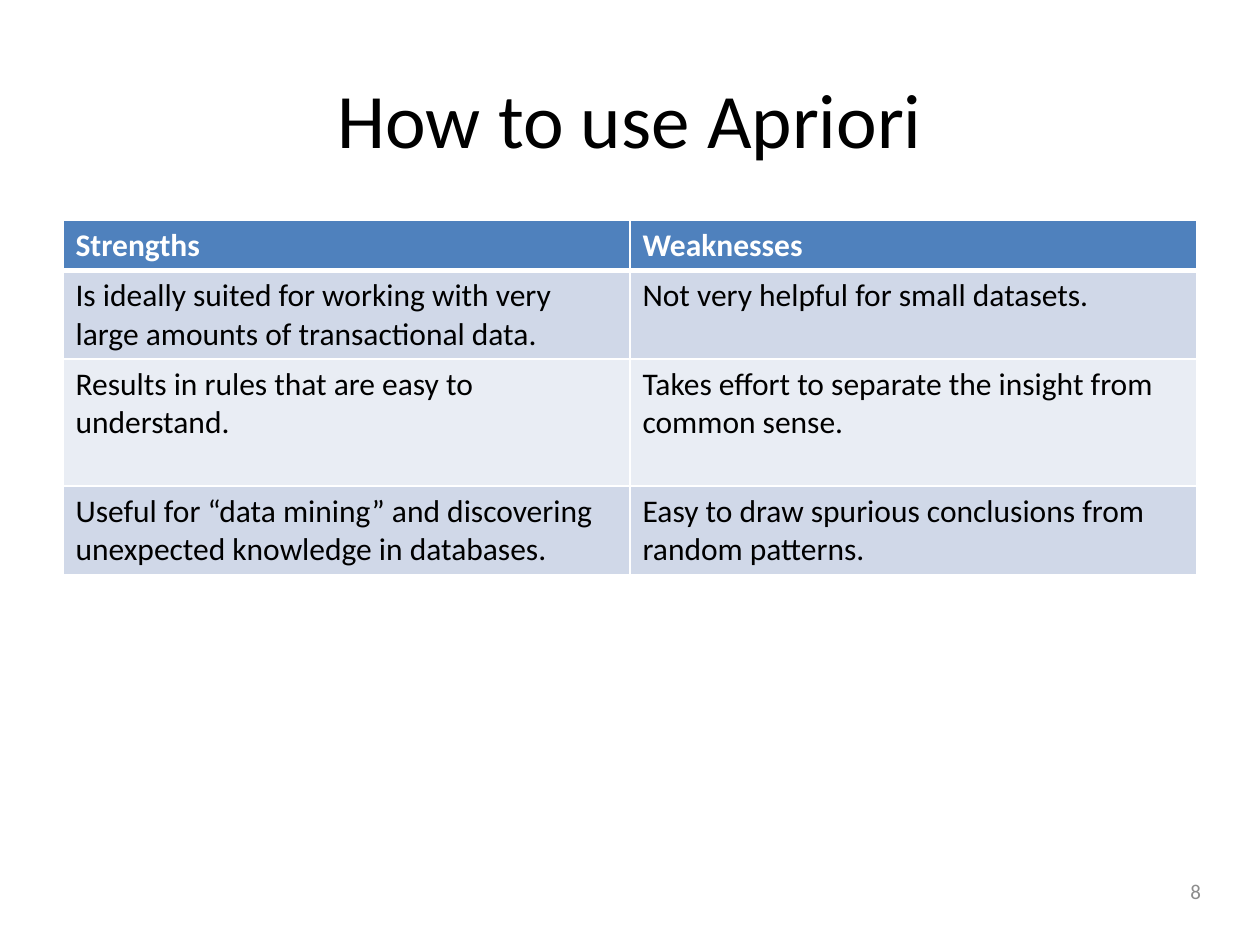
from dataclasses import dataclass

from lxml.etree import SubElement
from pptx import Presentation
from pptx.dml.color import RGBColor as RGB
from pptx.enum.text import MSO_ANCHOR as ANCHOR, PP_ALIGN as ALIGN
from pptx.oxml.ns import qn
from pptx.util import Inches, Pt

COLORS = {
    "black": "000000",
    "white": "FFFFFF",
    "grey": "8C8C8C",
    "header": "4F81BD",
    "band_dark": "D0D8E8",
    "band_light": "E9EDF4",
}
WIDTH, HEIGHT = Inches(10), Inches(7.5)


@dataclass
class Box:
    x: float
    y: float
    w: float
    h: float

    def place(self) -> tuple[int, int, int, int]:
        return (int(self.x * WIDTH), int(self.y * HEIGHT),
                int(self.w * WIDTH), int(self.h * HEIGHT))


@dataclass
class Row:
    strength: str
    weakness: str
    height: float


ROWS = [
    Row("Strengths", "Weaknesses", 0.4),
    Row("Is ideally suited for working with very large amounts of transactional data.",
        "Not very helpful for small datasets.", 0.7),
    Row("Results in rules that are easy to understand.",
        "Takes effort to separate the insight from common sense.", 1.01),
    Row("Useful for “data mining” and discovering unexpected knowledge in databases.",
        "Easy to draw spurious conclusions from random patterns.", 0.7),
]


def write(tf, text: str, *, size: int = 18, color: str = "black",
          bold: bool = False, align=ALIGN.LEFT) -> None:
    p = tf.paragraphs[0]
    p.alignment = align
    r = p.add_run()
    r.text = text
    r.font.name = "Calibri"
    r.font.size = Pt(size)
    r.font.bold = bold
    r.font.color.rgb = RGB.from_string(COLORS[color])


def add_text(s, box: Box, text: str, **style) -> None:
    tf = s.shapes.add_textbox(*box.place()).text_frame
    tf.word_wrap = True
    tf.vertical_anchor = ANCHOR.MIDDLE
    write(tf, text, **style)


def set_borders(cell, widths: dict[str, int]) -> None:
    tc_pr = cell._tc.get_or_add_tcPr()
    for i, (side, width) in enumerate(widths.items()):
        ln = SubElement(tc_pr, qn(f"a:ln{side}"), w=str(Pt(width)))
        fill = SubElement(ln, qn("a:solidFill"))
        SubElement(fill, qn("a:srgbClr"), val=COLORS["white"])
        tc_pr.insert(i, ln)


def add_comparison(s, box: Box, rows: list[Row]) -> None:
    table = s.shapes.add_table(len(rows), 2, *box.place()).table
    for i, row in enumerate(rows):
        table.rows[i].height = Inches(row.height)
        header = i == 0
        fill = "header" if header else ("band_dark" if i % 2 else "band_light")
        borders = {"L": 1, "R": 1, "T": 3 if i == 1 else 1, "B": 3 if header else 1}
        for j, text in enumerate((row.strength, row.weakness)):
            cell = table.cell(i, j)
            cell.fill.solid()
            cell.fill.fore_color.rgb = RGB.from_string(COLORS[fill])
            set_borders(cell, borders)
            write(cell.text_frame, text, bold=header,
                  color="white" if header else "black")


def main() -> None:
    prs = Presentation()
    prs.slide_width, prs.slide_height = WIDTH, HEIGHT
    s = prs.slides.add_slide(prs.slide_layouts[6])
    add_text(s, Box(0.05, 0.04, 0.9, 0.17), "How to use Apriori",
             size=44, align=ALIGN.CENTER)
    table_height = sum(row.height for row in ROWS) / 7.5
    add_comparison(s, Box(0.05, 0.233, 0.9, table_height), ROWS)
    add_text(s, Box(0.73, 0.916, 0.233, 0.053), "8",
             size=12, color="grey", align=ALIGN.RIGHT)
    prs.save("out.pptx")


if __name__ == "__main__":
    main()
